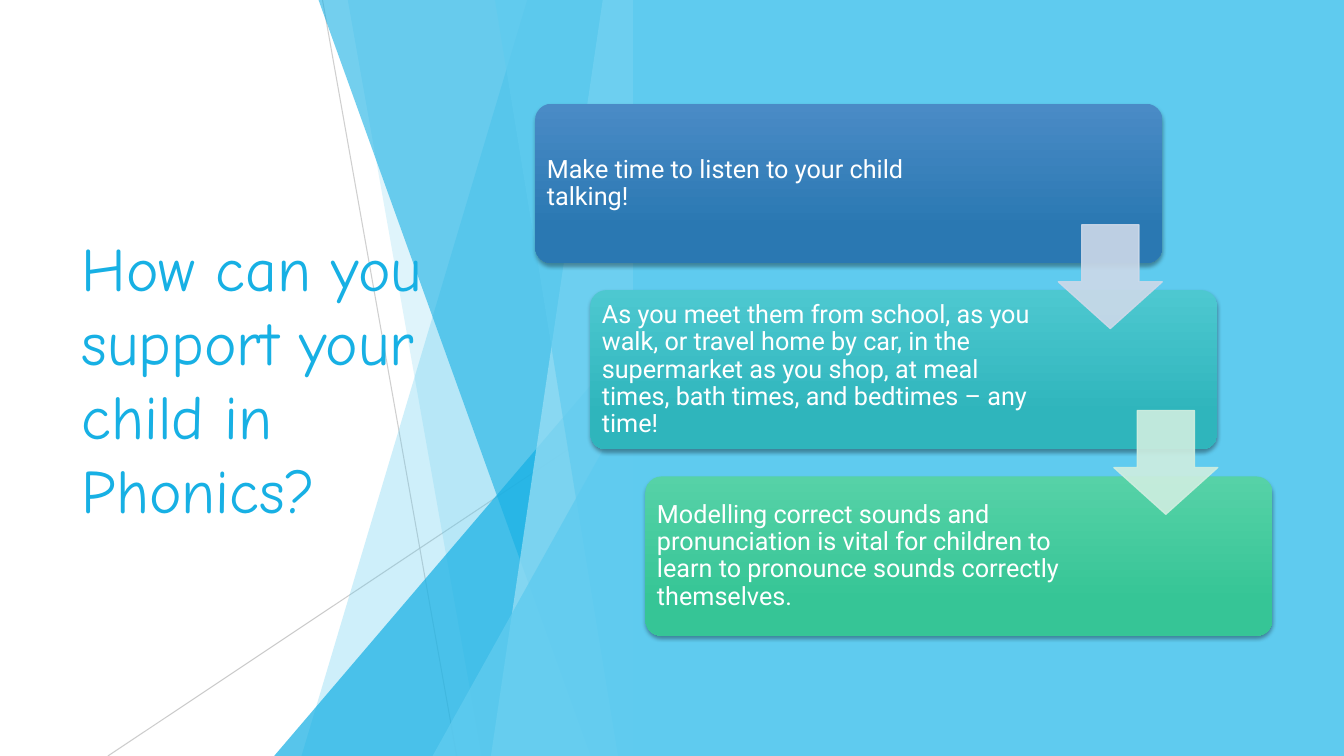
"""Build the slide on supporting a child in Phonics."""
import pptx
import pptx.dml.color
import pptx.enum.shapes
import pptx.enum.text
import pptx.oxml.ns
import pptx.util
from lxml import etree

RGB = pptx.dml.color.RGBColor
KIND = pptx.enum.shapes.MSO_SHAPE
WIDE, HIGH = pptx.util.Inches(13.333), pptx.util.Inches(7.5)
EDGE = 47.1

SKY = RGB(0x5F, 0xCB, 0xEF)
BLUE = RGB(0x17, 0xB0, 0xE4)
PALE = RGB(0x9F, 0xE0, 0xF5)
GREY = RGB(0xBF, 0xBF, 0xBF)
WHITE = RGB(0xFF, 0xFF, 0xFF)
BLACK = RGB(0x00, 0x00, 0x00)
ICE = RGB(0xCD, 0xD9, 0xE9)
MINT = RGB(0xCF, 0xEE, 0xE0)
NAVY = RGB(0x4A, 0x8B, 0xC6), RGB(0x2A, 0x78, 0xB2)
TEAL = RGB(0x4D, 0xC8, 0xD0), RGB(0x2F, 0xB5, 0xBC)
GREEN = RGB(0x56, 0xD2, 0xA7), RGB(0x36, 0xC5, 0x96)

MIDDLE = {"word_wrap": True, "vertical_anchor": pptx.enum.text.MSO_ANCHOR.MIDDLE}
TIGHT = dict.fromkeys(
    ("margin_left", "margin_top", "margin_right", "margin_bottom"), pptx.util.Inches(0.07))
HEAD = {"name": "Comic Neue", "size": pptx.util.Pt(44)}
BODY = {"name": "Roboto", "size": pptx.util.Pt(18)}
LINES = {"line_spacing": 0.9, "space_after": pptx.util.Pt(6.3)}

RAYS = [((24, 0), (33.98, 100), 75), ((EDGE, 53.73), (8.03, 100), 80)]
FACETS = [
    ("pane", 39.23, 22.43, SKY, 30),
    ("pane", 25.88, 35.85, SKY, 20),
    ("peak", 20.4, 44.4, BLUE, 72),
    ("pane", 23.7, 43.95, BLUE, 60),
    ("pane", 44.85, 36.53, PALE, 70),
    ("pane", 36.83, 45.98, SKY, 65),
    ("peak", 32.18, 52.4, SKY, 80),
]
CARDS = [
    ("Make time to listen to your child talking!", 33.83, NAVY),
    ("As you meet them from school, as you walk, or travel home by car, in the "
     "supermarket as you shop, at meal times, bath times, and bedtimes – any time!",
     34.13, TEAL),
    ("Modelling correct sounds and pronunciation is vital for children to learn "
     "to pronounce sounds correctly themselves.", 34.13, GREEN),
]


def put(obj, vals):
    """Set each format value on an object."""
    for name, val in vals.items():
        setattr(obj, name, val)


def spot(left, top):
    """Turn percentages of the slide into a point."""
    return round(WIDE * left / 100), round(HIGH * top / 100)


def area(left, top, width, height):
    """Turn percentages of the slide into a box."""
    return spot(left, top) + spot(width, height)


def fade(shape, alpha):
    """Give every colour of a shape an opacity in percent."""
    for tint in shape._element.spPr.iter(pptx.oxml.ns.qn("a:srgbClr")):
        etree.SubElement(tint, pptx.oxml.ns.qn("a:alpha"), val=str(alpha * 1000))


def paint(shape, tint, alpha=None):
    """Fill a shape flat, with no line and no shadow."""
    shape.shadow.inherit = False
    shape.fill.solid()
    shape.fill.fore_color.rgb = tint
    shape.line.fill.background()
    if alpha:
        fade(shape, alpha)


def ray(slide, start, end, alpha):
    """Draw a thin grey line."""
    line = slide.shapes.add_connector(
        pptx.enum.shapes.MSO_CONNECTOR.STRAIGHT, *spot(*start), *spot(*end))
    line.line.width = pptx.util.Pt(0.75)
    line.line.color.rgb = GREY
    fade(line, alpha)
    etree.SubElement(line._element.spPr, pptx.oxml.ns.qn("a:effectLst"))


def pane(slide, top, foot, tint, alpha):
    """Draw a full-height pane with a slanted left side."""
    form = slide.shapes.build_freeform(*spot(top, 0), scale=1.0)
    form.add_line_segments([spot(EDGE, 0), spot(EDGE, 100), spot(foot, 100)], close=True)
    paint(form.convert_to_shape(), tint, alpha)


def peak(slide, left, top, tint, alpha):
    """Draw a right triangle that stands on the slide's foot."""
    shape = slide.shapes.add_shape(
        KIND.ISOSCELES_TRIANGLE, *area(left, top, EDGE - left, 100 - top))
    shape.adjustments[0] = 1
    paint(shape, tint, alpha)


def text(slide, box, words, frame, para, font, tint):
    """Write one paragraph in a text box."""
    body = slide.shapes.add_textbox(*box).text_frame
    put(body, frame)
    first = body.paragraphs[0]
    first.text = words
    put(first, para)
    put(first.font, font)
    first.font.color.rgb = tint


def shade(shape):
    """Cast a soft shadow straight down."""
    shape.shadow.inherit = False
    effects = shape._element.spPr.find(pptx.oxml.ns.qn("a:effectLst"))
    cast = etree.SubElement(
        effects, pptx.oxml.ns.qn("a:outerShdw"), blurRad=str(pptx.util.Pt(3)),
        dist=str(pptx.util.Pt(2)), dir="5400000", algn="ctr", rotWithShape="0")
    tint = etree.SubElement(cast, pptx.oxml.ns.qn("a:srgbClr"), val=str(BLACK))
    etree.SubElement(tint, pptx.oxml.ns.qn("a:alpha"), val="35000")


def card(slide, step, words, width, tints):
    """Draw one rounded card of the stair with its text."""
    left, top = 39.83 + 4.1 * step, 13.73 + 24.65 * step
    shape = slide.shapes.add_shape(KIND.ROUNDED_RECTANGLE, *area(left, top, 46.65, 21.07))
    shape.adjustments[0] = 0.1
    shape.fill.gradient()
    shape.fill.gradient_angle = 270
    for stop, tint, place in zip(shape.fill.gradient_stops, tints, (0, 0.78)):
        stop.color.rgb = tint
        stop.position = place
    shape.line.fill.background()
    shade(shape)
    text(slide, area(left + 0.33, top + 0.6, width, 19.87), words,
         MIDDLE | TIGHT, LINES, BODY, WHITE)


def arrow(slide, step, tint):
    """Draw the arrow from one card to the next."""
    shape = slide.shapes.add_shape(
        KIND.DOWN_ARROW, *area(78.75 + 4.13 * step, 29.73 + 24.57 * step, 7.73, 13.73))
    shape.adjustments[0], shape.adjustments[1] = 0.55, 0.45
    paint(shape, tint)
    shape.line.color.rgb = tint
    shape.line.width = pptx.util.Pt(1)
    fade(shape, 90)


def main():
    """Build and save the slide."""
    deck = pptx.Presentation()
    put(deck, {"slide_width": WIDE, "slide_height": HIGH})
    slide = deck.slides.add_slide(deck.slide_layouts[6])
    for line in RAYS:
        ray(slide, *line)
    draw = {"pane": pane, "peak": peak}
    for kind, *facet in FACETS:
        draw[kind](slide, *facet)
    text(slide, area(5.33, 20.13, 29.1, 59.73),
         "How can you support your child in Phonics?", MIDDLE, {}, HEAD, BLUE)
    panel = slide.shapes.add_shape(KIND.RECTANGLE, *area(EDGE, 0, 100 - EDGE, 100))
    paint(panel, SKY)
    for step, item in enumerate(CARDS):
        card(slide, step, *item)
    for step, tint in enumerate((ICE, MINT)):
        arrow(slide, step, tint)
    deck.save("out.pptx")


if __name__ == "__main__":
    main()
